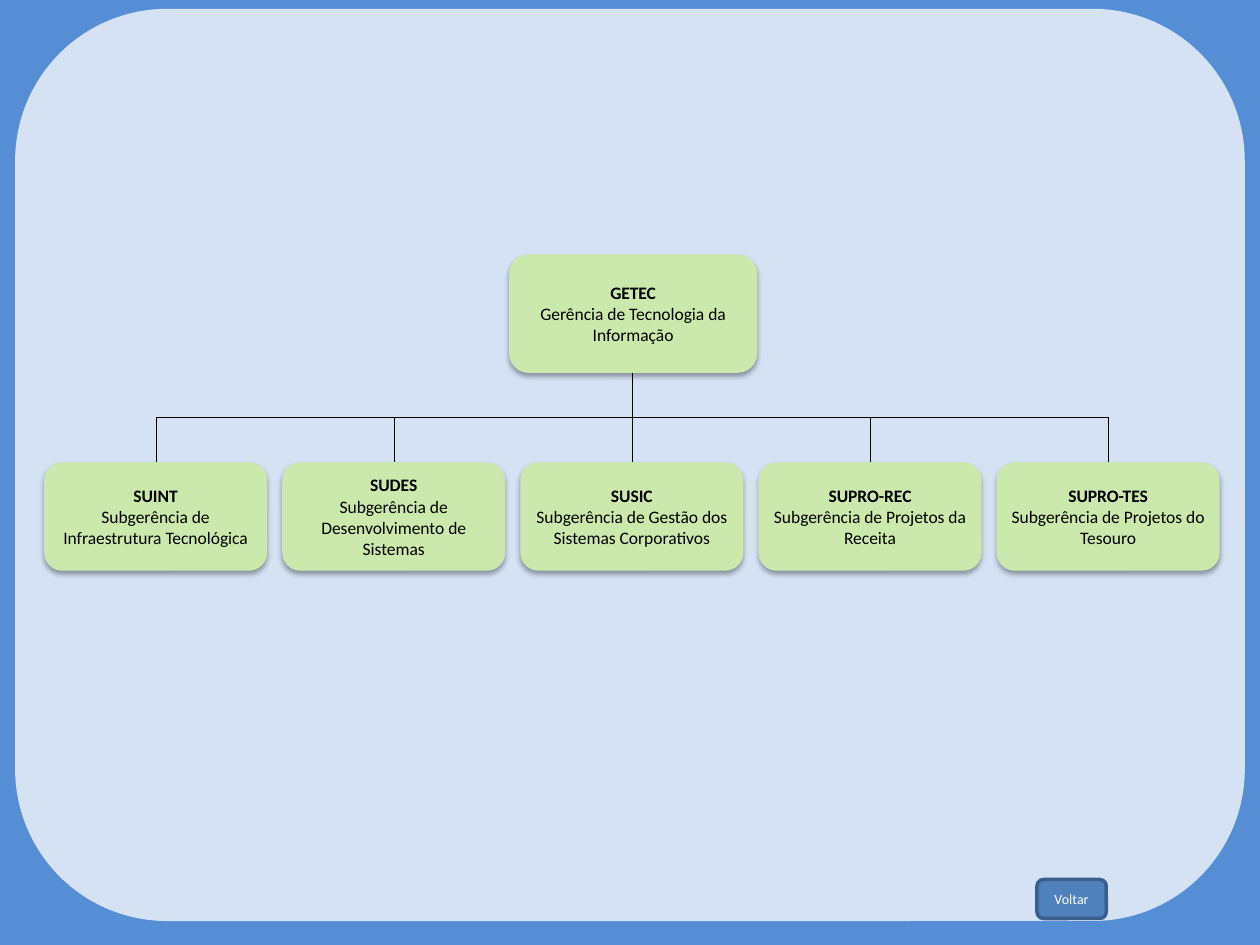
from lxml.etree import SubElement
from pptx import Presentation
from pptx.dml.color import RGBColor
from pptx.enum.shapes import MSO_CONNECTOR, MSO_SHAPE
from pptx.enum.text import MSO_ANCHOR, PP_ALIGN
from pptx.oxml.ns import qn
from pptx.util import Inches, Pt


def rgb(color):
    return RGBColor.from_string(color)


def add_box(x, y, w, h, fill, lines=(), size=10, color="000000", inset=0.1):
    """Rounded box without outline or shadow, with centred lines of text."""
    sp = s.shapes.add_shape(MSO_SHAPE.ROUNDED_RECTANGLE,
                            Inches(x), Inches(y), Inches(w), Inches(h))
    sp.shadow.inherit = False
    sp.fill.solid()
    sp.fill.fore_color.rgb = rgb(fill)
    sp.line.fill.background()
    tf = sp.text_frame
    tf.word_wrap = True
    tf.vertical_anchor = MSO_ANCHOR.MIDDLE
    tf.margin_left = tf.margin_right = Inches(inset)
    tf.margin_top = tf.margin_bottom = Inches(min(inset, 0.05))
    tf.text = "\n".join(lines)
    for p in tf.paragraphs:
        p.alignment = PP_ALIGN.CENTER
        p.font.size = Pt(size)
        for r in p.runs:
            r.font.name = "Calibri"
            r.font.size = Pt(size)
            r.font.color.rgb = rgb(color)
    return sp


prs = Presentation()
prs.slide_width, prs.slide_height = Inches(10), Inches(7.5)
s = prs.slides.add_slide(prs.slide_layouts[6])

# Background and panel
s.background.fill.solid()
s.background.fill.fore_color.rgb = rgb("558ED5")
add_box(0.12, 0.07, 9.76, 7.24, "D4E2F4")

# Organisation chart: the department on top, its units in one row
GREEN = "CCE9AD"
UNIT_X, UNIT_Y, UNIT_W, UNIT_H, STEP = 0.35, 3.67, 1.77, 0.86, 1.89
units = [
    ("SUINT", "Subgerência de Infraestrutura Tecnológica"),
    ("SUDES", "Subgerência de Desenvolvimento de Sistemas"),
    ("SUSIC", "Subgerência de Gestão dos Sistemas Corporativos"),
    ("SUPRO-REC", "Subgerência de Projetos da Receita"),
    ("SUPRO-TES", "Subgerência de Projetos do Tesouro"),
]
boxes = [add_box(4.04, 2.02, 1.97, 0.94, GREEN,
                 ("GETEC", "Gerência de Tecnologia da Informação"))]
for i, unit in enumerate(units):
    boxes.append(add_box(UNIT_X + i * STEP, UNIT_Y, UNIT_W, UNIT_H, GREEN,
                         unit, inset=0.04))

# Bold acronyms and soft shadows
for sp in boxes:
    sp.text_frame.paragraphs[0].runs[0].font.bold = True
    effects = sp._element.spPr.find(qn("a:effectLst"))
    shadow = SubElement(effects, qn("a:outerShdw"), blurRad=str(Pt(3.1)),
                        dist=str(Pt(1.8)), dir="5400000", rotWithShape="0")
    black = SubElement(shadow, qn("a:srgbClr"), val="000000")
    SubElement(black, qn("a:alpha"), val="35000")

# Elbow connectors, turned a quarter so that they leave downwards
ROOT_X, ROOT_BOTTOM = 5.02, 2.96
drop = UNIT_Y - ROOT_BOTTOM
mid_y = (ROOT_BOTTOM + UNIT_Y) / 2
for i in range(len(units)):
    offset = (i - 2) * STEP
    mid_x = ROOT_X + offset / 2
    left, right = mid_x - drop / 2, mid_x + drop / 2
    begin, end = (left, right) if offset < 0 else (right, left)
    half = abs(offset) / 2
    c = s.shapes.add_connector(MSO_CONNECTOR.ELBOW, Inches(begin), Inches(mid_y - half),
                               Inches(end), Inches(mid_y + half))
    c.line.color.rgb = rgb("000000")
    c.line.width = Pt(0.75)
    spPr = c._element.spPr
    spPr.find(qn("a:xfrm")).set("rot", "5400000" if offset < 0 else "16200000")
    SubElement(spPr, qn("a:effectLst"))

# Back button
button = add_box(8.23, 6.98, 0.55, 0.31, "4F81BD", ["Voltar"], size=8, color="FFFFFF")
button.line.color.rgb = rgb("3A5F8C")
button.line.width = Pt(2)

prs.save("out.pptx")
